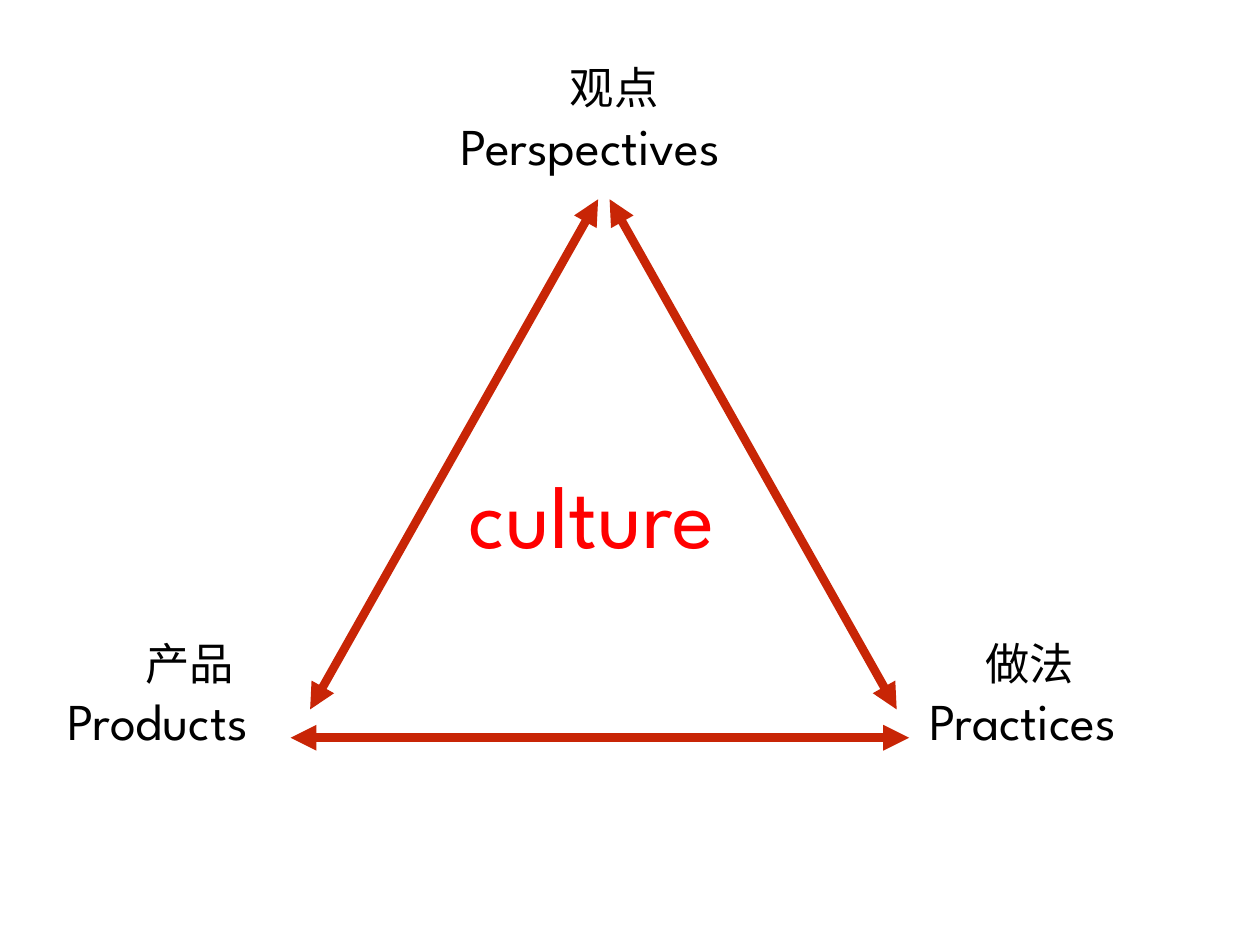
from lxml.etree import SubElement
from pptx import Presentation
from pptx.dml.color import RGBColor
from pptx.enum.shapes import MSO_CONNECTOR
from pptx.enum.text import MSO_ANCHOR, MSO_AUTO_SIZE, PP_ALIGN
from pptx.oxml.ns import qn
from pptx.util import Inches, Pt

BLACK = RGBColor(0x00, 0x00, 0x00)
RED = RGBColor(0xFF, 0x00, 0x00)
BRICK = RGBColor(0xC8, 0x25, 0x06)

# Content: left, top, width, height in inches
ENGLISH_LABELS = [
    ("Perspectives", (5.14, 1.29, 3.25, 0.76)),
    ("Products", (0.7, 7.78, 2.3, 0.76)),
    ("Practices", (10.43, 7.78, 2.38, 0.76)),
]
CHINESE_LABELS = [
    ("观点", (6.35, 0.57)),
    ("产品", (1.56, 7.08)),
    ("做法", (11.04, 7.08)),
]
CHINESE_SIZE = (1.16, 0.81)
CENTRE_WORD = ("culture", (5.23, 5.19, 3.09, 1.3))
TRIANGLE_SIDES = [
    ((3.5, 8.01), (6.75, 2.25)),
    ((3.28, 8.33), (10.26, 8.33)),
    ((6.88, 2.25), (10.12, 8.01)),
]

deck = Presentation()
deck.slide_width, deck.slide_height = Inches(14.22), Inches(10.67)
slide = deck.slides.add_slide(deck.slide_layouts[6])


def add_label(text, box, size, font="League Spartan", color=BLACK, inset=0,
              indent=0.06, align=PP_ALIGN.LEFT, anchor=MSO_ANCHOR.TOP):
    frame = slide.shapes.add_textbox(*map(Inches, box)).text_frame
    frame.word_wrap = False
    frame.auto_size = MSO_AUTO_SIZE.SHAPE_TO_FIT_TEXT
    frame.vertical_anchor = anchor
    frame.margin_left = frame.margin_right = Inches(inset)
    frame.margin_top = frame.margin_bottom = Inches(inset)
    paragraph = frame.paragraphs[0]
    paragraph.alignment = align
    properties = paragraph._p.get_or_add_pPr()
    properties.set("marL", "0")
    properties.set("indent", str(Inches(indent)))
    run = paragraph.add_run()
    run.text = text
    run.font.name, run.font.size = font, Pt(size)
    run.font.color.rgb = color


def add_double_arrow(start, end):
    side = slide.shapes.add_connector(
        MSO_CONNECTOR.STRAIGHT, *map(Inches, start + end))
    side.line.color.rgb = BRICK
    side.line.width = Pt(7)
    outline = side.line._get_or_add_ln()
    for tip in ("a:headEnd", "a:tailEnd"):
        SubElement(outline, qn(tip), type="triangle")
    SubElement(side._element.spPr, qn("a:effectLst"))


# English corner labels
for word, box in ENGLISH_LABELS:
    add_label(word, box, 42)

# Triangle of arrows around the centre word
for start, end in TRIANGLE_SIDES:
    add_double_arrow(start, end)
add_label(*CENTRE_WORD, 72, color=RED)

# Chinese corner labels
for word, corner in CHINESE_LABELS:
    add_label(word, corner + CHINESE_SIZE, 36, font="Calibri", inset=0.06,
              indent=0, align=PP_ALIGN.CENTER, anchor=MSO_ANCHOR.MIDDLE)

deck.save("out.pptx")
